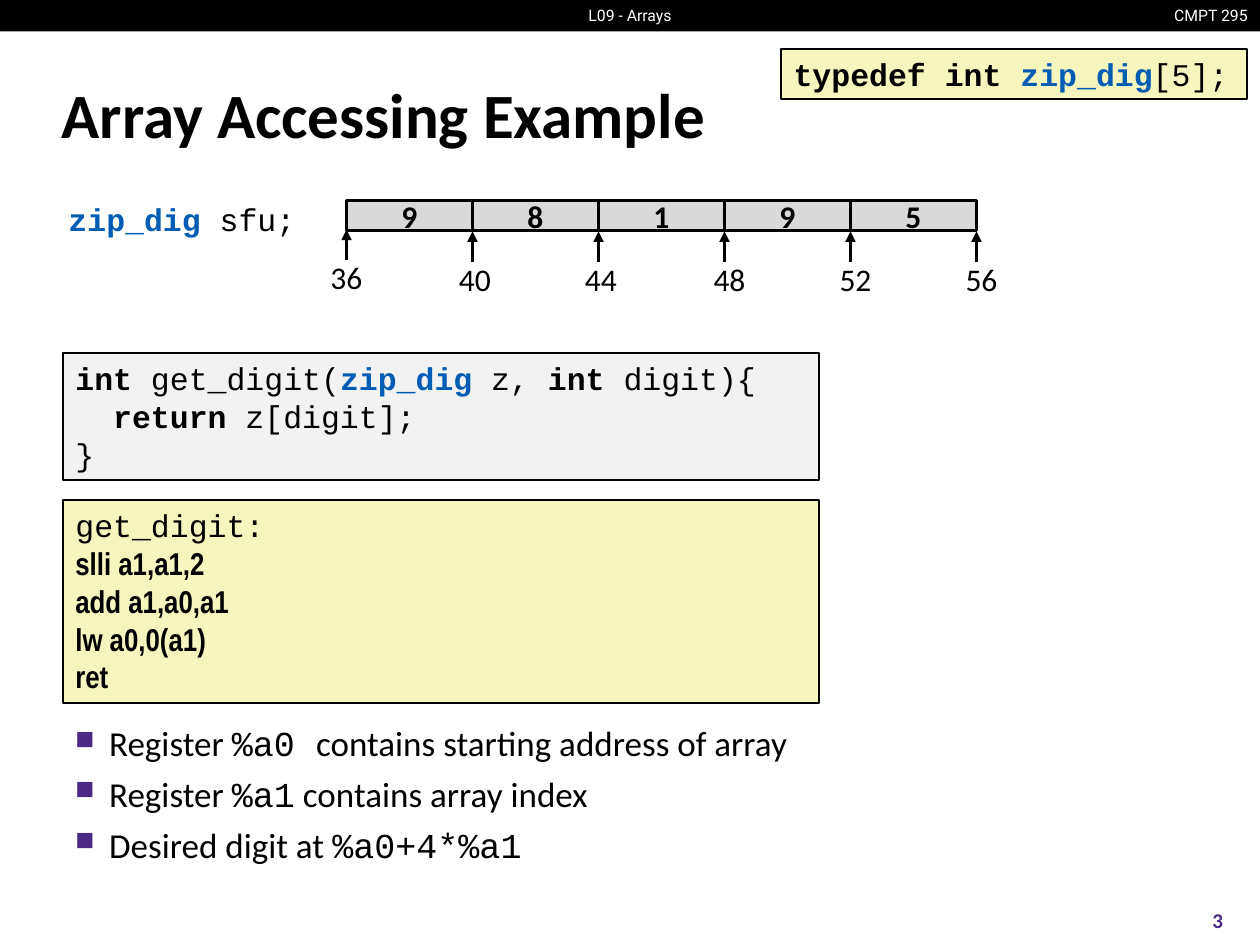
from pptx import Presentation
from pptx.util import Pt
from pptx.dml.color import RGBColor
from pptx.enum.shapes import MSO_SHAPE, MSO_CONNECTOR
from pptx.enum.text import PP_ALIGN, MSO_ANCHOR
from pptx.oxml.ns import qn
from lxml.etree import SubElement

HUE = {"black": "000000", "white": "FFFFFF", "blue": "015DB3", "purple": "4B2A85",
       "gray": "F2F2F2", "cell": "D9D9D9", "cream": "F6F5BD"}
MONO, BODY, HEAD, SLIM = "Courier New", "Calibri", "Roboto", "Arial Narrow"
LEFT, MID, RIGHT = PP_ALIGN.LEFT, PP_ALIGN.CENTER, PP_ALIGN.RIGHT

# Content: a line is a list of runs, a run is (text, style)
KEY = {"bold": True}
TYPE = {"bold": True, "color": "blue"}
CODE = {"font": MONO}
TITLE = "Array Accessing Example"
TYPEDEF = [[("typedef int ", KEY), ("zip_dig", TYPE), ("[5];", {})]]
DECL = [[("zip_dig ", TYPE), ("sfu;", {})]]
FUNC = [
    [("int ", KEY), ("get_digit(", {}), ("zip_dig", TYPE), (" z, ", {}),
     ("int", KEY), (" digit){", {})],
    [("  ", {}), ("return", KEY), (" z[digit];", {})],
    [("}", {})],
]
ASM = ["slli a1,a1,2", "add a1,a0,a1", "lw a0,0(a1)", "ret"]
NOTES = [
    [("Register ", {}), ("%a0 ", CODE), ("contains starting address of array", {})],
    [("Register ", {}), ("%a1", CODE), (" contains array index", {})],
    [("Desired digit at ", {}), ("%a0+4*%a1", CODE)],
]
DIGITS = [9, 8, 1, 9, 5]
START, STEP = 36, 4
NUDGE = [0, 1.4, 1.4, 2.9, 2.9, 2.9]  # label shift to the right of its arrow

deck = Presentation()
deck.slide_width, deck.slide_height = Pt(720), Pt(540)
slide = deck.slides.add_slide(deck.slide_layouts[5])


def rgb(name):
    return RGBColor.from_string(HUE[name])


def style(font, face, size, color="black", bold=False):
    font.name, font.size, font.bold = face, Pt(size), bold
    font.color.rgb = rgb(color)


def write(shape, lines, face, size, align=LEFT, color="black", bold=False,
          wrap=True, anchor=MSO_ANCHOR.TOP):
    frame = shape.text_frame
    frame.word_wrap, frame.vertical_anchor = wrap, anchor
    for i, line in enumerate(lines):
        para = frame.add_paragraph() if i else frame.paragraphs[0]
        para.alignment = align
        style(para.font, face, size, color, bold)
        for words, look in [(line, {})] if isinstance(line, str) else line:
            run = para.add_run()
            run.text = words
            if "font" in look:
                run.font.name = look["font"]
            if "bold" in look:
                run.font.bold = look["bold"]
            if "color" in look:
                run.font.color.rgb = rgb(look["color"])
    return frame


def text(box, lines, *args, **opts):
    return write(slide.shapes.add_textbox(*map(Pt, box)), lines, *args, **opts)


def rect(box, fill, line=None):
    shape = slide.shapes.add_shape(MSO_SHAPE.RECTANGLE, *map(Pt, box))
    shape.shadow.inherit = False
    shape.fill.solid()
    shape.fill.fore_color.rgb = rgb(fill)
    if line:
        shape.line.color.rgb, shape.line.width = rgb("black"), Pt(line)
    else:
        shape.line.fill.background()
    return shape


def arrow(x, low, high):
    link = slide.shapes.add_connector(MSO_CONNECTOR.STRAIGHT, Pt(x), Pt(low), Pt(x), Pt(high))
    link.line.color.rgb, link.line.width = rgb("black"), Pt(2)
    SubElement(link.line._get_or_add_ln(), qn("a:tailEnd"), type="triangle")
    SubElement(link._element.spPr, qn("a:effectLst"))


def bullet(para):
    para.space_before = Pt(5)
    props = para._p.get_or_add_pPr()
    props.set("marL", str(Pt(31.5)))
    props.set("indent", str(Pt(-19.5)))
    tint = SubElement(props, qn("a:buClr"))
    SubElement(tint, qn("a:srgbClr"), val=HUE["purple"])
    SubElement(props, qn("a:buSzPct"), val="75000")
    SubElement(props, qn("a:buChar"), char="■")
    # Schema order: default run properties come last
    props.append(props.find(qn("a:defRPr")))


# Header bar
rect((0, 0, 720, 18), "black")
text((661.7, 0, 58.3, 18), ["CMPT 295"], HEAD, 9, RIGHT, "white", wrap=False)
text((328, 0, 64, 18), ["L09 - Arrays"], HEAD, 9, MID, "white", wrap=False)

# Title and page number
title = slide.shapes.title
title.left, title.top, title.width, title.height = map(Pt, (28, 34.5, 662, 60))
write(title, [TITLE], BODY, 36, bold=True, anchor=MSO_ANCHOR.MIDDLE)
text((671.8, 511.2, 48.2, 28.8), ["3"], BODY, 12, MID, "purple", True,
     anchor=MSO_ANCHOR.MIDDLE)

# Function and declaration
write(rect((36, 201.6, 432, 72.7), "gray", 1), FUNC, MONO, 18)
text((23.8, 111, 152, 29), DECL, MONO, 18, RIGHT)

# Array cells, then an arrow and an address at every cell border
X, Y, W, H = 198, 114.5, 72, 17.3
for i, digit in enumerate(DIGITS):
    write(rect((X + i * W, Y, W, H), "cell", 2), [str(digit)], BODY, 18, MID,
          bold=True, wrap=False, anchor=MSO_ANCHOR.MIDDLE)
for i, nudge in enumerate(NUDGE):
    x, drop = X + i * W, 1 if i else 0
    arrow(x, 148.5 + drop, 131.2 + drop)
    text((x + nudge - 39, 144 + drop, 78, 29), [str(START + i * STEP)], BODY, 18, MID)

# Assembly
asm = [[("get_digit:", {**CODE, "bold": False})]] + ASM
write(rect((36, 285.8, 432, 116), "cream", 1), asm, SLIM, 18, bold=True)

# Notes
for para in text((23.8, 409, 659, 129.6), NOTES, BODY, 20).paragraphs:
    bullet(para)

# Type definition
write(rect((446.4, 28, 266.4, 28.8), "cream", 1), TYPEDEF, MONO, 18)

deck.save("out.pptx")
